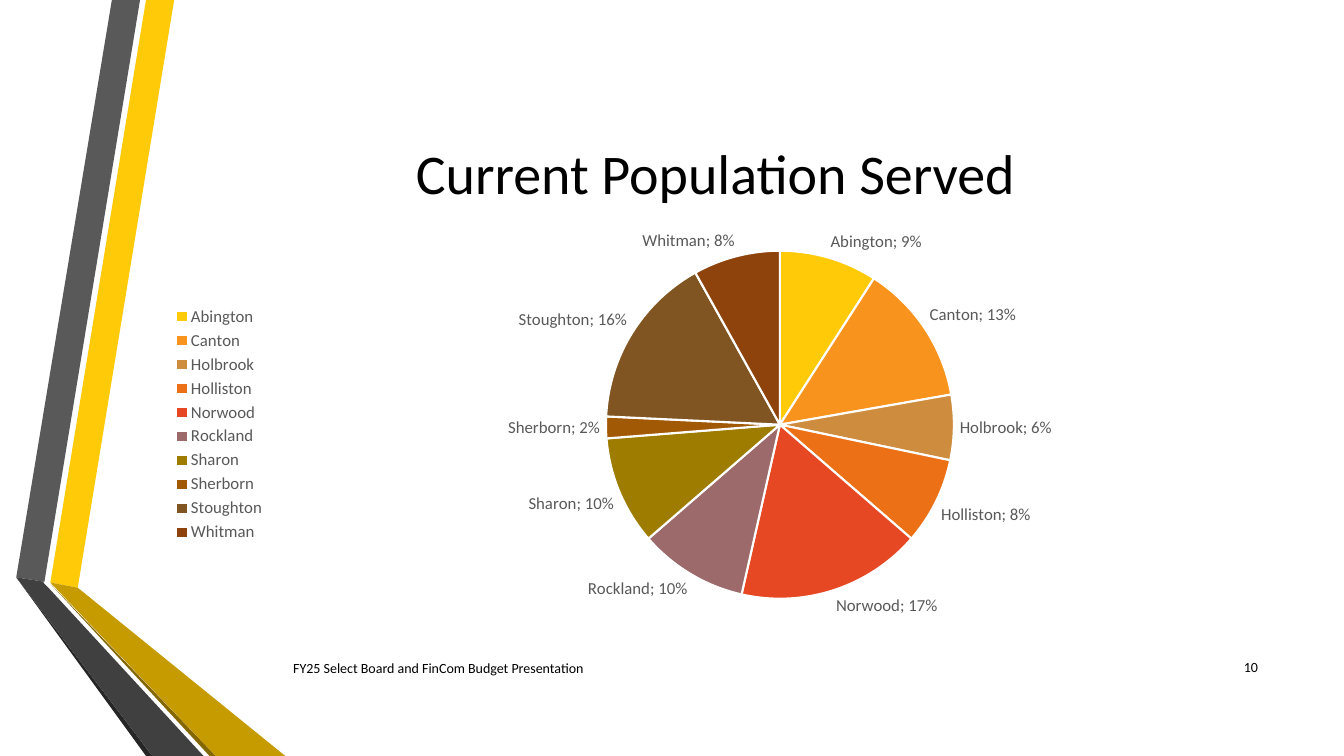
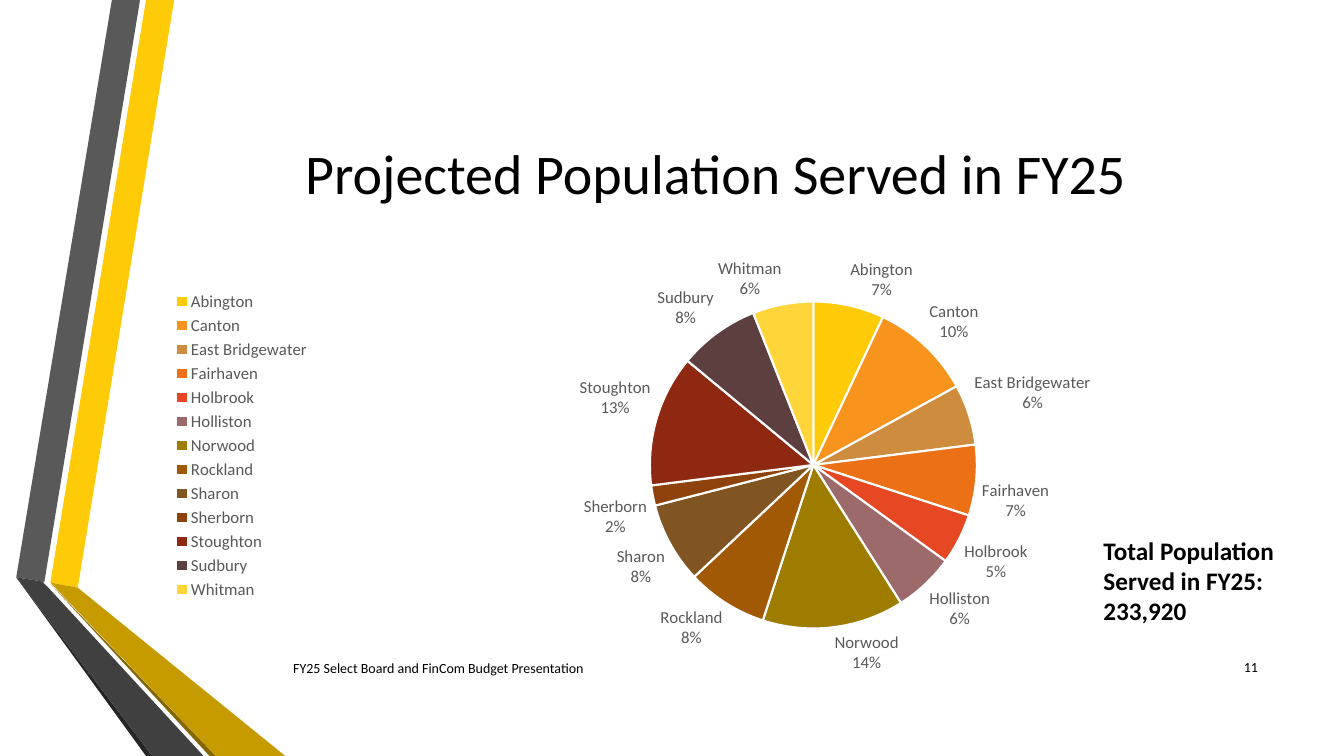
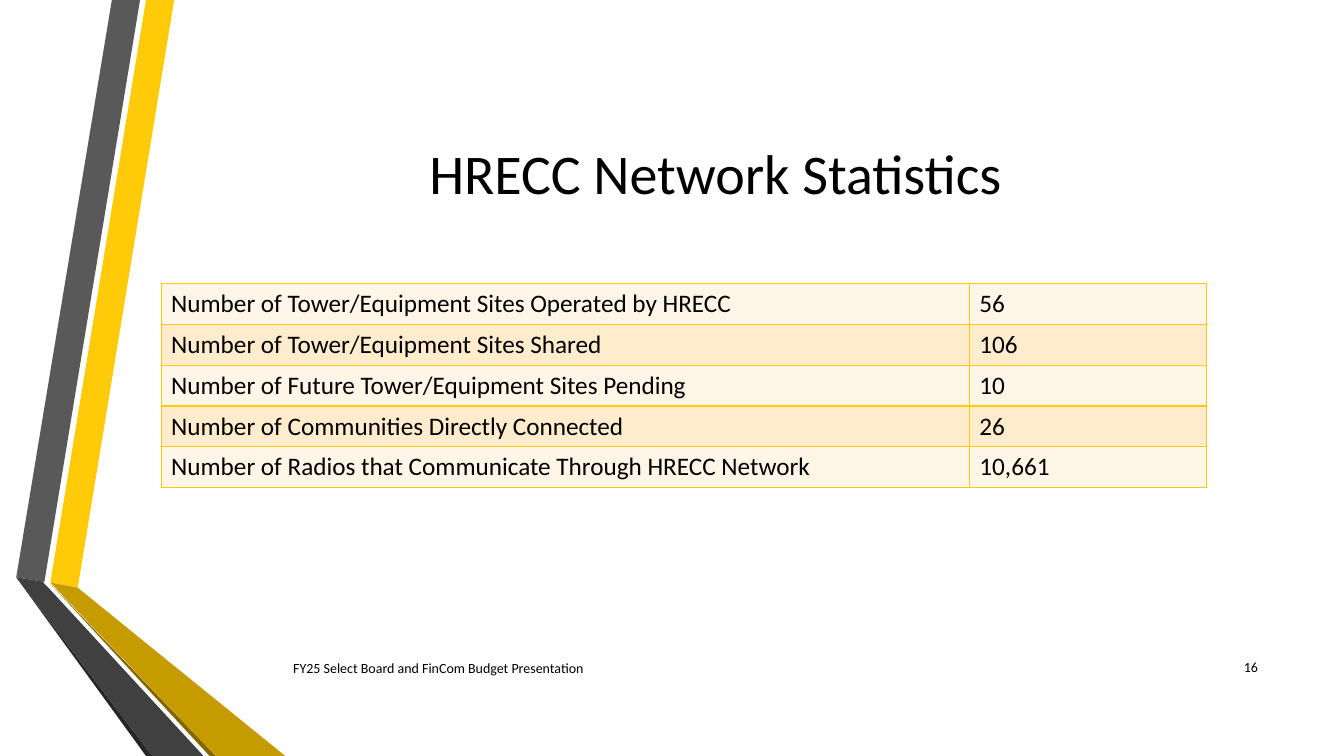
import pptx
import pptx.chart.data
import pptx.dml.color
import pptx.enum.chart
import pptx.enum.text
import pptx.oxml
import pptx.oxml.ns
import pptx.util

Cm, Pt = pptx.util.Cm, pptx.util.Pt
RGB = pptx.dml.color.RGBColor
ALIGN = pptx.enum.text.PP_ALIGN
ANCHOR = pptx.enum.text.MSO_ANCHOR
qn = pptx.oxml.ns.qn

# Shared style
FONT = "Calibri"
FOOTER = "FY25 Select Board and FinCom Budget Presentation"
BLACK = RGB(0x00, 0x00, 0x00)
WHITE = RGB(0xFF, 0xFF, 0xFF)
GRAY = RGB(0x59, 0x59, 0x59)
CHARCOAL = RGB(0x40, 0x40, 0x40)
NEAR_BLACK = RGB(0x26, 0x26, 0x26)
GOLD = RGB(0xFF, 0xCA, 0x08)
DARK_GOLD = RGB(0xC5, 0x9B, 0x00)
DEEP_GOLD = RGB(0x84, 0x67, 0x00)
CREAM = RGB(0xFF, 0xF6, 0xE7)
PEACH = RGB(0xFF, 0xEC, 0xCC)
SLICES = [
    GOLD, RGB(0xF8, 0x93, 0x1D), RGB(0xCE, 0x8D, 0x3E), RGB(0xEC, 0x70, 0x16),
    RGB(0xE6, 0x48, 0x23), RGB(0x9C, 0x6A, 0x6A), RGB(0x9E, 0x7C, 0x00),
    RGB(0xA1, 0x59, 0x05), RGB(0x80, 0x55, 0x21), RGB(0x8F, 0x43, 0x0C),
    RGB(0x8F, 0x28, 0x10), RGB(0x5E, 0x3F, 0x3F), RGB(0xFF, 0xD5, 0x39),
]

# Folded ribbons: fill and corners in cm
RIBBONS = [
    (GOLD, [(1.27, 14.68), (1.96, 14.81), (4.39, 0), (3.68, 0)]),
    (GRAY, [(3.53, 0), (2.82, 0), (0.41, 14.55), (1.12, 14.66)]),
    (NEAR_BLACK, [(0.41, 14.55), (3.68, 19.05), (3.84, 19.05)]),
    (DEEP_GOLD, [(1.27, 14.71), (5.28, 19.05), (5.44, 19.05)]),
    (DARK_GOLD, [(1.27, 14.68), (5.44, 19.05), (7.19, 19.05), (1.96, 14.81)]),
    (CHARCOAL, [(5.13, 19.05), (1.22, 14.81), (1.09, 14.68), (1.12, 14.66),
                (0.41, 14.55), (3.84, 19.05)]),
]

CURRENT = {
    "Abington": 9, "Canton": 13, "Holbrook": 6, "Holliston": 8, "Norwood": 17,
    "Rockland": 10, "Sharon": 10, "Sherborn": 2, "Stoughton": 16, "Whitman": 8,
}
PROJECTED = {
    "Abington": 7, "Canton": 10, "East Bridgewater": 6, "Fairhaven": 7,
    "Holbrook": 5, "Holliston": 6, "Norwood": 14, "Rockland": 8, "Sharon": 8,
    "Sherborn": 2, "Stoughton": 13, "Sudbury": 8, "Whitman": 6,
}
STATISTICS = [
    ("Number of Tower/Equipment Sites Operated by HRECC", "56"),
    ("Number of Tower/Equipment Sites Shared", "106"),
    ("Number of Future Tower/Equipment Sites Pending", "10"),
    ("Number of Communities Directly Connected", "26"),
    ("Number of Radios that Communicate Through HRECC Network", "10,661"),
]


def style_font(font, size, color=BLACK, bold=False):
    font.name, font.size, font.bold = FONT, Pt(size), bold
    font.color.rgb = color


def add_run(p, text, size, bold=False):
    r = p.add_run()
    r.text = text
    style_font(r.font, size, bold=bold)


def add_text(s, box, lines, size, align=ALIGN.LEFT, anchor=ANCHOR.MIDDLE, bold=False):
    tf = s.shapes.add_textbox(*map(Cm, box)).text_frame
    tf.word_wrap = True
    tf.vertical_anchor = anchor
    for i, line in enumerate(lines):
        p = tf.add_paragraph() if i else tf.paragraphs[0]
        p.alignment = align
        add_run(p, line, size, bold)


def add_ribbons(s):
    for color, corners in RIBBONS:
        points = [(Cm(x), Cm(y)) for x, y in corners]
        builder = s.shapes.build_freeform(*points[0])
        builder.add_line_segments(points[1:], close=True)
        sp = builder.convert_to_shape()
        sp.shadow.inherit = False
        sp.fill.solid()
        sp.fill.fore_color.rgb = color
        sp.line.fill.background()


def add_base_slide(prs, title, number):
    """Blank slide with ribbons, title, footer and page number."""
    s = prs.slides.add_slide(prs.slide_layouts[6])
    add_ribbons(s)
    add_text(s, (4.11, 1.9, 27.84, 4.88), [title], 40, ALIGN.CENTER)
    add_text(s, (7.14, 16.33, 19.69, 1.02), [FOOTER], 10)
    add_text(s, (30.43, 16.3, 1.52, 1.02), [str(number)], 10, ALIGN.RIGHT)
    return s


def set_plot_area(chart, box, pie):
    """Fix the pie at (left, top, diameter) inside the chart box."""
    left, top, width, height = box
    x, y, d = pie
    parts = {"x": (x - left) / width, "y": (y - top) / height,
             "w": d / width, "h": d / height}
    area = chart._chartSpace.find(".//" + qn("c:plotArea"))
    for old in area.findall(qn("c:layout")):
        area.remove(old)
    values = "".join(f'<c:{k} val="{v:.4f}"/>' for k, v in parts.items())
    area.insert(0, pptx.oxml.parse_xml(
        f'<c:layout {pptx.oxml.ns.nsdecls("c")}><c:manualLayout>'
        '<c:layoutTarget val="inner"/><c:xMode val="edge"/><c:yMode val="edge"/>'
        f'{values}</c:manualLayout></c:layout>'))


def add_pie(s, box, pie, shares, separator):
    data = pptx.chart.data.CategoryChartData()
    data.categories = list(shares)
    data.add_series("Series 1", list(shares.values()))
    chart = s.shapes.add_chart(
        pptx.enum.chart.XL_CHART_TYPE.PIE, *map(Cm, box), data).chart
    chart.has_title = False
    style_font(chart.font, 10)
    set_plot_area(chart, box, pie)

    # Legend
    chart.has_legend = True
    chart.legend.position = pptx.enum.chart.XL_LEGEND_POSITION.LEFT
    chart.legend.include_in_layout = False
    style_font(chart.legend.font, 12, GRAY)

    # Slices
    chart.plots[0].vary_by_categories = True
    series = chart.plots[0].series[0]
    for i in range(len(shares)):
        fmt = series.points[i].format
        fmt.fill.solid()
        fmt.fill.fore_color.rgb = SLICES[i]
        fmt.line.color.rgb = WHITE
        fmt.line.width = Pt(1.5)

    # Labels
    labels = series.data_labels
    style_font(labels.font, 12, GRAY)
    labels.show_value = False
    labels.show_category_name = True
    labels.show_percentage = True
    labels.number_format = "0%"
    labels.number_format_is_linked = False
    labels.position = pptx.enum.chart.XL_LABEL_POSITION.OUTSIDE_END
    sep = pptx.oxml.parse_xml(f'<c:separator {pptx.oxml.ns.nsdecls("c")}/>')
    sep.text = separator
    labels._element.find(qn("c:showBubbleSize")).addnext(sep)


def add_borders(cell, color):
    tc_pr = cell._tc.get_or_add_tcPr()
    for side in "LRTB":
        tc_pr.append(pptx.oxml.parse_xml(
            f'<a:ln{side} {pptx.oxml.ns.nsdecls("a")} w="12700"><a:solidFill>'
            f'<a:srgbClr val="{color}"/></a:solidFill></a:ln{side}>'))


def add_statistics(s, left, top, widths, row_height, rows):
    table = s.shapes.add_table(
        len(rows), len(widths), Cm(left), Cm(top),
        Cm(sum(widths)), Cm(row_height * len(rows))).table
    table.first_row = table.horz_banding = False
    for col, width in zip(table.columns, widths):
        col.width = Cm(width)
    for i, texts in enumerate(rows):
        table.rows[i].height = Cm(row_height)
        for j, text in enumerate(texts):
            cell = table.cell(i, j)
            add_borders(cell, GOLD)
            cell.fill.solid()
            cell.fill.fore_color.rgb = PEACH if i % 2 else CREAM
            add_run(cell.text_frame.paragraphs[0], text, 18)


def main():
    prs = pptx.Presentation()
    prs.slide_width, prs.slide_height = Cm(33.87), Cm(19.05)

    s = add_base_slide(prs, "Current Population Served", 10)
    add_pie(s, (4.11, 5.38, 27.84, 10.62), (15.27, 6.32, 8.77), CURRENT, "; ")

    s = add_base_slide(prs, "Projected Population Served in FY25", 11)
    add_pie(s, (4.11, 5.11, 27.84, 12.24), (16.38, 7.6, 8.24), PROJECTED, "\n")
    add_text(s, (27.56, 13.36, 5.46, 2.57),
             ["Total Population Served in FY25:", "233,920"], 18,
             anchor=ANCHOR.TOP, bold=True)

    s = add_base_slide(prs, "HRECC Network Statistics", 16)
    add_statistics(s, 4.06, 7.14, (20.37, 5.97), 1.03, STATISTICS)

    prs.save("out.pptx")


if __name__ == "__main__":
    main()
